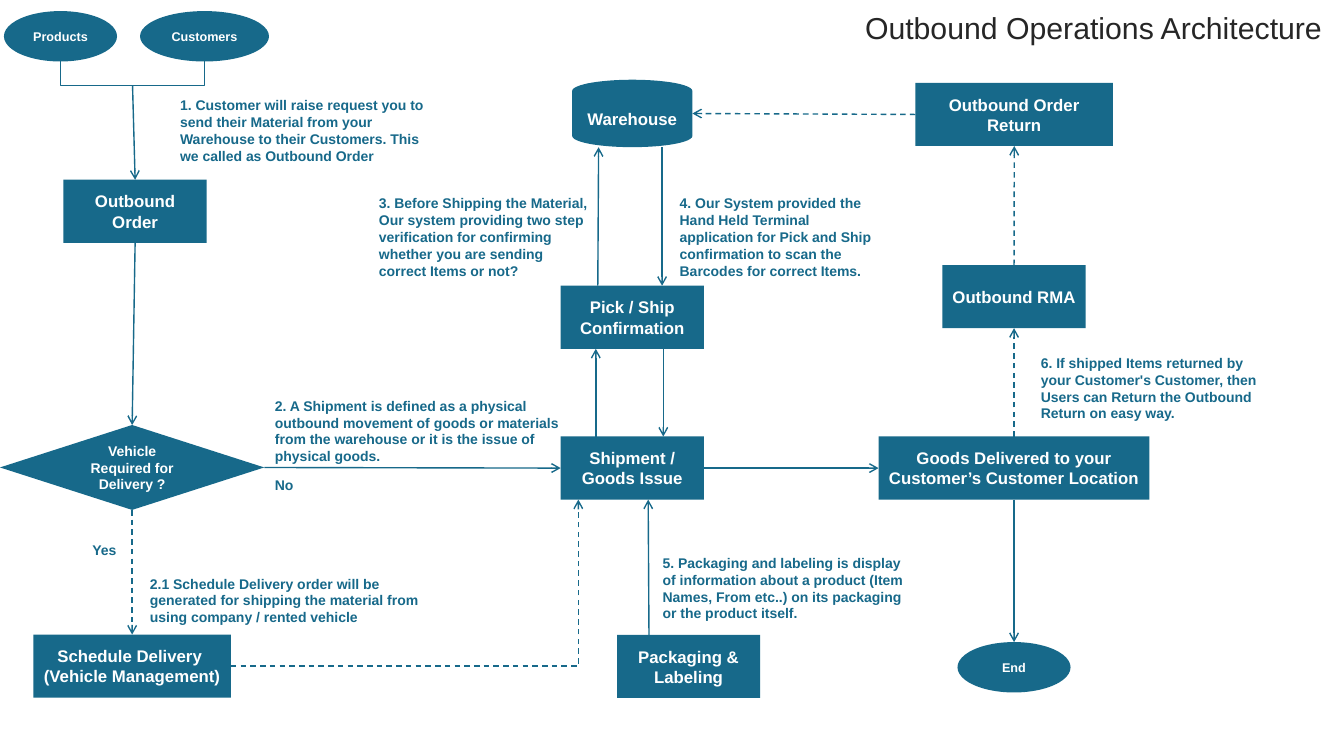
import pptx
import pptx.util
import pptx.dml.color
import pptx.enum.dml
import pptx.enum.shapes
import pptx.enum.text
import pptx.oxml.ns
import lxml.etree

Cm, Pt = pptx.util.Cm, pptx.util.Pt
SHAPE = pptx.enum.shapes.MSO_SHAPE
CONNECTOR = pptx.enum.shapes.MSO_CONNECTOR
ALIGN = pptx.enum.text.PP_ALIGN
ANCHOR = pptx.enum.text.MSO_ANCHOR
qn = pptx.oxml.ns.qn

# Content; all lengths are centimetres
COLORS = {"teal": "17698A", "white": "FFFFFF", "title": "262626"}
FONT = "Arial"
TITLE = "Outbound Operations Architecture"

# kind: preset shape, width, height, text size
KINDS = {
    "box": (SHAPE.RECTANGLE, 3.61, 1.59, 12),
    "wide": (SHAPE.RECTANGLE, 4.98, 1.59, 12),
    "widest": (SHAPE.RECTANGLE, 6.83, 1.59, 12),
    "oval": (SHAPE.OVAL, 2.85, 1.27, 9),
    "wide oval": (SHAPE.OVAL, 3.25, 1.27, 9),
    "decision": (SHAPE.FLOWCHART_DECISION, 6.66, 2.14, 10),
    "store": (SHAPE.FLOWCHART_MAGNETIC_DISK, 3.03, 1.7, 12),
}

# name: kind, left, top, lines of text
NODES = {
    "products": ("oval", 0.1, 0.28, ["Products"]),
    "customers": ("wide oval", 3.53, 0.28, ["Customers"]),
    "order": ("box", 1.6, 4.53, ["Outbound Order"]),
    "vehicle": ("decision", 0, 10.71, ["Vehicle Required for Delivery ?"]),
    "schedule": ("wide", 0.84, 15.99, ["Schedule Delivery ", "(Vehicle Management)"]),
    "warehouse": ("store", 14.42, 2.01, ["Warehouse"]),
    "pick": ("box", 14.13, 7.2, ["Pick / Ship Confirmation"]),
    "shipment": ("box", 14.13, 11, ["Shipment / Goods Issue"]),
    "packaging": ("box", 15.55, 16, ["Packaging & Labeling"]),
    "return": ("wide", 23.07, 2.09, ["Outbound Order Return"]),
    "rma": ("box", 23.75, 6.68, ["Outbound RMA"]),
    "goods": ("widest", 22.14, 11, ["Goods Delivered to your Customer’s Customer Location"]),
    "end": ("oval", 24.13, 16.18, ["End"]),
}

# start and end as (node, side, shift from the middle of that side), dashed
ARROWS = [
    (("order", "bottom", 0), ("vehicle", "top", 0), False),
    (("vehicle", "right", 0), ("shipment", "left", 0), False),
    (("vehicle", "bottom", 0), ("schedule", "top", 0), True),
    (("shipment", "right", 0), ("goods", "left", 0), False),
    (("pick", "bottom", 0.78), ("shipment", "top", 0.78), False),
    (("shipment", "top", -0.92), ("pick", "bottom", -0.92), False),
    (("warehouse", "bottom", 0.75), ("pick", "top", 0.75), False),
    (("pick", "top", -0.87), ("warehouse", "bottom", -0.85), False),
    (("packaging", "top", -1), ("shipment", "bottom", 0.4), False),
    (("goods", "bottom", 0), ("end", "top", 0), False),
    (("goods", "top", 0), ("rma", "bottom", 0), True),
    (("rma", "top", 0), ("return", "bottom", 0), True),
    (("return", "left", 0), ("warehouse", "right", 0), True),
]

# left, top, width, height, text
NOTES = [
    (4.29, 2.31, 6.84, 1.95, "1. Customer will raise request you to send their Material from your "
     "Warehouse to their Customers. This we called as Outbound Order"),
    (6.68, 9.88, 7.72, 1.95, "2. A Shipment is defined as a physical outbound movement of goods or "
     "materials from the warehouse or it is the issue of physical goods."),
    (3.53, 14.36, 7.72, 1.54, "2.1 Schedule Delivery order will be generated for shipping the "
     "material from using company / rented vehicle"),
    (9.3, 4.78, 5.78, 2.38, "3. Before Shipping the Material, Our system providing two step "
     "verification for confirming whether you are sending correct Items or not?"),
    (16.88, 4.78, 5.51, 2.38, "4. Our System provided the Hand Held Terminal application for Pick "
     "and Ship confirmation to scan the Barcodes for correct Items."),
    (16.45, 13.84, 6.8, 1.95, "5. Packaging and labeling is display of information about a product "
     "(Item Names, From etc..) on its packaging or the product itself."),
    (25.98, 8.8, 6.22, 1.95, "6. If shipped Items returned by your Customer's Customer, then Users "
     "can Return the Outbound Return on easy way."),
    (2.08, 13.51, 1.57, 0.68, "Yes"),
    (6.68, 11.89, 1.57, 0.68, "No"),
]


def color(name):
    return pptx.dml.color.RGBColor.from_string(COLORS[name])


def write(shape, lines, size, color_name, bold, align, anchor):
    frame = shape.text_frame
    frame.word_wrap = True
    frame.auto_size = pptx.enum.text.MSO_AUTO_SIZE.NONE
    frame.vertical_anchor = anchor
    frame.margin_left = frame.margin_right = Cm(0.25)
    frame.margin_top = frame.margin_bottom = Cm(0.13)
    paragraph = frame.paragraphs[0]
    paragraph.alignment = align
    for index, line in enumerate(lines):
        if index:
            paragraph.add_line_break()
        run = paragraph.add_run()
        run.text = line
        run.font.name, run.font.size, run.font.bold = FONT, Pt(size), bold
        run.font.color.rgb = color(color_name)
    return paragraph


def anchor_point(name, side, shift):
    kind, left, top, _ = NODES[name]
    _, width, height, _ = KINDS[kind]
    if side in ("top", "bottom"):
        return left + width / 2 + shift, top + (height if side == "bottom" else 0)
    return left + (width if side == "right" else 0), top + height / 2 + shift


def add_arrow(start, end, dashed, kind=CONNECTOR.STRAIGHT):
    arrow = slide.shapes.add_connector(kind, *[Cm(value) for value in (*start, *end)])
    arrow.line.color.rgb = color("teal")
    arrow.line.width = Pt(1)
    if dashed:
        arrow.line.dash_style = pptx.enum.dml.MSO_LINE.DASH
    properties = arrow.element.spPr
    lxml.etree.SubElement(properties.find(qn("a:ln")), qn("a:tailEnd"), type="arrow")
    lxml.etree.SubElement(properties, qn("a:effectLst"))
    return arrow


presentation = pptx.Presentation()
presentation.slide_width, presentation.slide_height = Cm(33.87), Cm(19.05)
slide = presentation.slides.add_slide(presentation.slide_layouts[5])

# Title
title = slide.shapes.title
title.left, title.top, title.width, title.height = Cm(21.26), Cm(0), Cm(12.6), Cm(1.6)
heading = write(title, [TITLE], 21.6, "title", False, ALIGN.CENTER, ANCHOR.MIDDLE)
heading.line_spacing = 0.7
heading.space_before = Pt(10)

# Nodes
for kind, left, top, lines in NODES.values():
    preset, width, height, size = KINDS[kind]
    node = slide.shapes.add_shape(preset, Cm(left), Cm(top), Cm(width), Cm(height))
    node.shadow.inherit = False
    node.fill.solid()
    node.fill.fore_color.rgb = color("teal")
    node.line.fill.background()
    write(node, lines, size, "white", True, ALIGN.CENTER, ANCHOR.MIDDLE)

# Bracket joining products and customers
bracket_y = 2.15
left_x, oval_bottom = anchor_point("products", "bottom", 0)
right_x, _ = anchor_point("customers", "bottom", 0)
builder = slide.shapes.build_freeform(Cm(left_x), Cm(oval_bottom))
builder.add_line_segments([(Cm(x), Cm(y)) for x, y in (
    (left_x, bracket_y), (right_x, bracket_y), (right_x, oval_bottom))], close=False)
bracket = builder.convert_to_shape()
bracket.shadow.inherit = False
bracket.fill.background()
bracket.line.color.rgb = color("teal")
bracket.line.width = Pt(1)
add_arrow(((left_x + right_x) / 2, bracket_y), anchor_point("order", "top", 0), False)

# Straight arrows, then the single-bend arrow from scheduling to shipment
for start, end, dashed in ARROWS:
    add_arrow(anchor_point(*start), anchor_point(*end), dashed)
bend = add_arrow(anchor_point("schedule", "right", 0),
                 anchor_point("shipment", "bottom", -1.36), True, CONNECTOR.ELBOW)
bend.element.spPr.find(qn("a:prstGeom")).set("prst", "bentConnector2")

# Step notes and branch labels
for left, top, width, height, text in NOTES:
    note = slide.shapes.add_textbox(Cm(left), Cm(top), Cm(width), Cm(height))
    write(note, [text], 10, "teal", True, ALIGN.LEFT, ANCHOR.TOP)

presentation.save("out.pptx")
